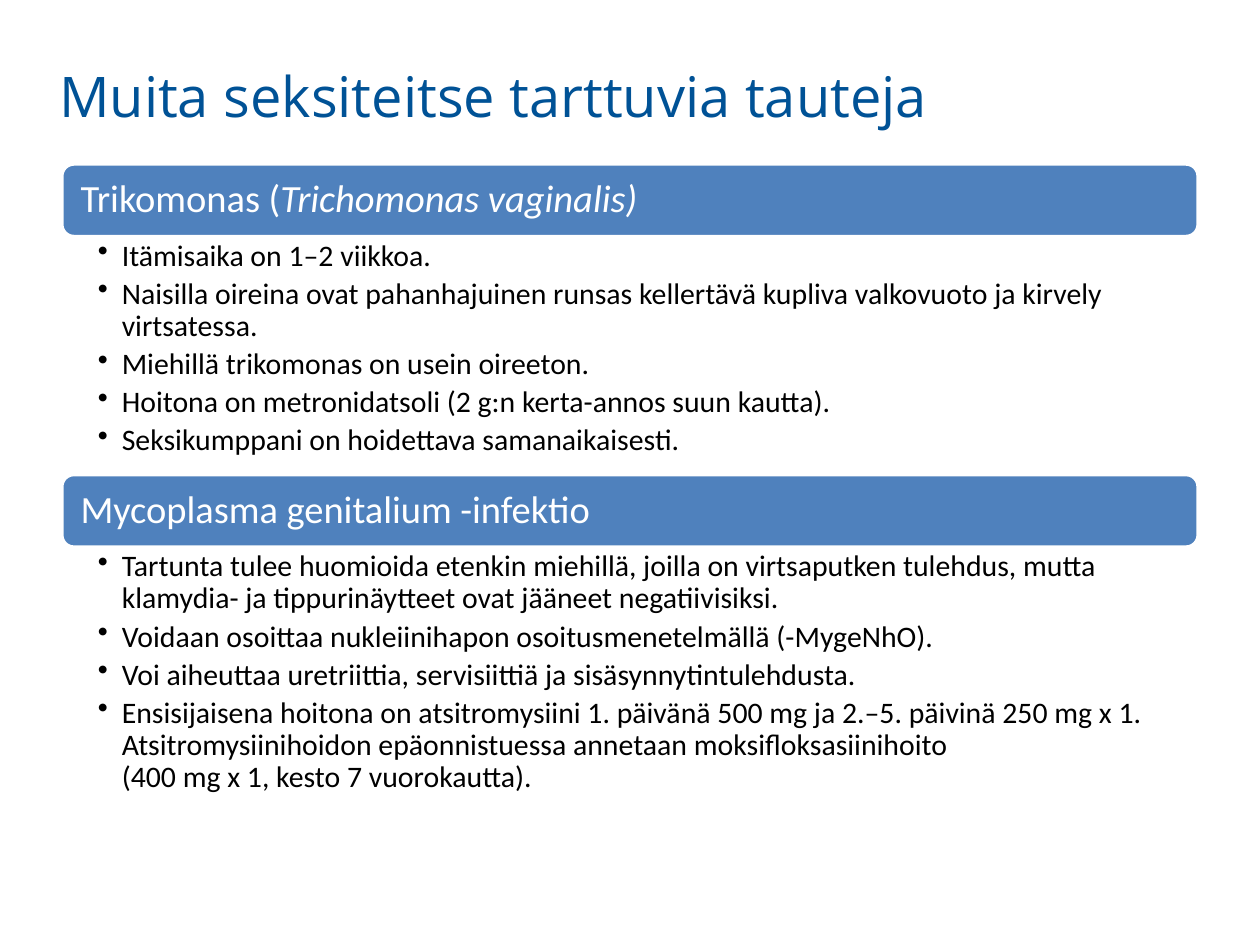
import pptx
import pptx.dml.color
import pptx.enum.shapes
import pptx.enum.text
import pptx.util
from lxml import etree
from pptx.oxml.ns import qn

Pt = pptx.util.Pt
ANCHOR = pptx.enum.text.MSO_ANCHOR
LEFT = pptx.enum.text.PP_ALIGN.LEFT

TITLE = "Muita seksiteitse tarttuvia tauteja"
DISEASES = [
    ([("Trikomonas (", None), ("Trichomonas vaginalis)", True)], 136, [
        "Itämisaika on 1–2 viikkoa.",
        "Naisilla oireina ovat pahanhajuinen runsas kellertävä kupliva valkovuoto ja kirvely virtsatessa.",
        "Miehillä trikomonas on usein oireeton.",
        "Hoitona on metronidatsoli (2 g:n kerta-annos suun kautta).",
        "Seksikumppani on hoidettava samanaikaisesti.",
    ]),
    ([("Mycoplasma genitalium -infektio", None)], 150.5, [
        "Tartunta tulee huomioida etenkin miehillä, joilla on virtsaputken tulehdus, mutta "
        "klamydia- ja tippurinäytteet ovat jääneet negatiivisiksi.",
        "Voidaan osoittaa nukleiinihapon osoitusmenetelmällä (-MygeNhO).",
        "Voi aiheuttaa uretriittia, servisiittiä ja sisäsynnytintulehdusta.",
        "Ensisijaisena hoitona on atsitromysiini 1. päivänä 500 mg ja 2.–5. päivinä 250 mg x 1. "
        "Atsitromysiinihoidon epäonnistuessa annetaan moksifloksasiinihoito \v"
        "(400 mg x 1, kesto 7 vuorokautta).",
    ]),
]
BAR_HEIGHT = 41.5

TITLE_FONT = {"name": "Open Sans", "size": Pt(32)}
HEADING_FONT = {"name": "Calibri", "size": Pt(22)}
BULLET_FONT = {"name": "Calibri", "size": Pt(17)}
TITLE_FRAME = {"vertical_anchor": ANCHOR.TOP, "word_wrap": True}
HEADING_FRAME = {"vertical_anchor": ANCHOR.MIDDLE, "word_wrap": True,
                 "margin_left": Pt(8.7), "margin_right": Pt(8.7),
                 "margin_top": Pt(6.6), "margin_bottom": Pt(6.6)}
BULLET_FRAME = {"vertical_anchor": ANCHOR.TOP, "word_wrap": True,
                "margin_left": Pt(20.6), "margin_right": Pt(12),
                "margin_top": Pt(2.2), "margin_bottom": Pt(2.2)}
HEADING_PARAGRAPH = {"alignment": LEFT, "line_spacing": 0.9, "space_after": Pt(7.7)}
BULLET_PARAGRAPH = {"alignment": LEFT, "level": 1, "line_spacing": 0.9, "space_after": Pt(3.4)}


def color(hex_value):
    return pptx.dml.color.RGBColor.from_string(hex_value)


def apply(target, values):
    for name, value in values.items():
        setattr(target, name, value)


def style_runs(paragraph, font, hex_value):
    for run in paragraph.runs:
        apply(run.font, font)
        run.font.color.rgb = color(hex_value)


def add_bullet(paragraph):
    properties = paragraph._p.get_or_add_pPr()
    properties.set("marL", str(Pt(13.7)))
    properties.set("indent", str(-Pt(13.7)))
    etree.SubElement(properties, qn("a:buChar"), char="•")


def place_title(slide, left, top, width, height):
    title = slide.shapes.title
    apply(title, {"left": Pt(left), "top": Pt(top), "width": Pt(width), "height": Pt(height)})
    apply(title.text_frame, TITLE_FRAME)
    paragraph = title.text_frame.paragraphs[0]
    paragraph.text = TITLE
    paragraph.alignment = LEFT
    style_runs(paragraph, TITLE_FONT, "005296")


def add_heading(slide, parts, left, top, width, height):
    bar = slide.shapes.add_shape(
        pptx.enum.shapes.MSO_SHAPE.ROUNDED_RECTANGLE,
        Pt(left), Pt(top), Pt(width), Pt(height))
    bar.shadow.inherit = False
    bar.fill.solid()
    bar.fill.fore_color.rgb = color("4F81BD")
    bar.line.color.rgb = color("FFFFFF")
    bar.line.width = Pt(2)
    apply(bar.text_frame, HEADING_FRAME)
    paragraph = bar.text_frame.paragraphs[0]
    apply(paragraph, HEADING_PARAGRAPH)
    for text, italic in parts:
        run = paragraph.add_run()
        run.text = text
        run.font.italic = italic
    style_runs(paragraph, HEADING_FONT, "FFFFFF")


def add_facts(slide, facts, left, top, width, height):
    frame = slide.shapes.add_textbox(Pt(left), Pt(top), Pt(width), Pt(height)).text_frame
    apply(frame, BULLET_FRAME)
    for index, fact in enumerate(facts):
        paragraph = frame.add_paragraph() if index else frame.paragraphs[0]
        paragraph.text = fact
        add_bullet(paragraph)
        apply(paragraph, BULLET_PARAGRAPH)
        style_runs(paragraph, BULLET_FONT, "000000")


def add_diseases(slide, left, top, width):
    for heading, facts_height, facts in DISEASES:
        add_heading(slide, heading, left, top, width, BAR_HEIGHT)
        top += BAR_HEIGHT
        add_facts(slide, facts, left, top, width, facts_height)
        top += facts_height


def main():
    presentation = pptx.Presentation()
    apply(presentation, {"slide_width": Pt(720), "slide_height": Pt(540)})
    slide = presentation.slides.add_slide(presentation.slide_layouts.get_by_name("Title Only"))
    place_title(slide, 26.6, 31.7, 649.4, 90.7)
    add_diseases(slide, 35.3, 93.7, 649.4)
    presentation.save("out.pptx")


if __name__ == "__main__":
    main()
